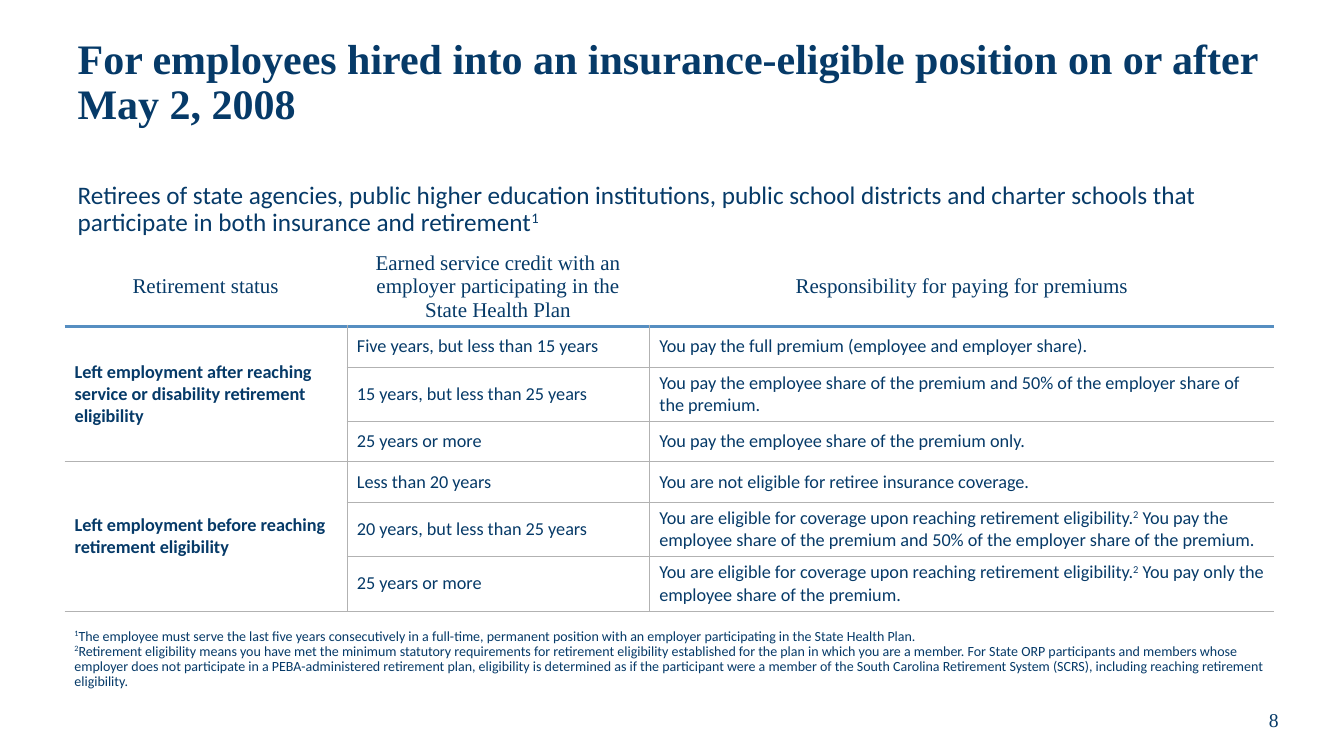
from lxml import etree
from pptx import Presentation
from pptx.dml.color import RGBColor
from pptx.enum.text import MSO_ANCHOR as ANCHOR, MSO_AUTO_SIZE as AUTO, PP_ALIGN as ALIGN
from pptx.oxml.ns import qn
from pptx.util import Pt

PX = 9144
COLORS = {"navy": "063A68", "blue": "568EC1", "gray": "B2B2B2"}
SERIF, SANS = "Times New Roman", "Calibri"

HEADERS = ["Retirement status",
           "Earned service credit with an\nemployer participating in the\nState Health Plan",
           "Responsibility for paying for premiums"]
ELIGIBLE = "You are eligible for coverage upon reaching retirement eligibility.^2^ "
STATUSES = [
    ("Left employment after reaching service or disability retirement eligibility", [
        ("Five years, but less than 15 years",
         "You pay the full premium (employee and employer share)."),
        ("15 years, but less than 25 years",
         "You pay the employee share of the premium and 50% of the employer share of the premium."),
        ("25 years or more", "You pay the employee share of the premium only.")]),
    ("Left employment before reaching retirement eligibility", [
        ("Less than 20 years", "You are not eligible for retiree insurance coverage."),
        ("20 years, but less than 25 years",
         ELIGIBLE + "You pay the employee share of the premium and 50% of the employer share of the premium."),
        ("25 years or more", ELIGIBLE + "You pay only the employee share of the premium.")]),
]
FOOTNOTES = [
    "^1^The employee must serve the last five years consecutively in a full-time, permanent position "
    "with an employer participating in the State Health Plan.",
    "^2^Retirement eligibility means you have met the minimum statutory requirements for retirement "
    "eligibility established for the plan in which you are a member. For State ORP participants and "
    "members whose employer does not participate in a PEBA-administered retirement plan, eligibility "
    "is determined as if the participant were a member of the South Carolina Retirement System (SCRS), "
    "including reaching retirement eligibility.",
]


def px(*values):
    return [v * PX for v in values]


def write(p, text, size, font=SANS, bold=False, align=ALIGN.LEFT, spacing=1.0):
    p.alignment = align
    p.line_spacing = spacing
    p.space_before = p.space_after = Pt(0)
    for n, line in enumerate(text.split("\n")):
        if n:
            p.add_line_break()
        for i, part in enumerate(line.split("^")):
            if not part:
                continue
            r = p.add_run()
            r.text = part
            r.font.size, r.font.name, r.font.bold = Pt(size), font, bold
            r.font.color.rgb = RGBColor.from_string(COLORS["navy"])
            if i % 2:
                r._r.get_or_add_rPr().set("baseline", "30000")


def place(sp, left, top, width, height, anchor=ANCHOR.TOP):
    sp.left, sp.top, sp.width, sp.height = px(left, top, width, height)
    tf = sp.text_frame
    tf.word_wrap, tf.auto_size, tf.vertical_anchor = True, AUTO.NONE, anchor
    return tf


def add_text_box(slide, box, paragraphs, anchor=ANCHOR.TOP, **fmt):
    tf = place(slide.shapes.add_textbox(*px(*box)), *box, anchor=anchor)
    for i, text in enumerate(paragraphs):
        write(tf.add_paragraph() if i else tf.paragraphs[0], text, **fmt)


def set_border(cell, side, line):
    tc_pr = cell._tc.get_or_add_tcPr()
    ln = etree.SubElement(tc_pr, qn(f"a:ln{side}"))
    if line is None:
        etree.SubElement(ln, qn("a:noFill"))
        return
    color, width = line
    ln.set("w", str(Pt(width)))
    fill = etree.SubElement(ln, qn("a:solidFill"))
    etree.SubElement(fill, qn("a:srgbClr")).set("val", COLORS[color])


def cell_borders(row, col, last_col):
    thin, thick = ("gray", 0.5), ("blue", 3)
    if row == 0:
        return {"L": None, "R": None, "T": None, "B": thick}
    return {"L": thin if col else None,
            "R": thin if col < last_col else None,
            "T": thick if row == 1 else thin,
            "B": thin}


def add_premium_table(slide, left, top, widths, heights):
    frame = slide.shapes.add_table(len(heights), len(widths),
                                   *px(left, top, sum(widths), sum(heights)))
    table = frame.table
    table.first_row = table.horz_banding = False
    for column, width in zip(table.columns, px(*widths)):
        column.width = width
    for row, height in zip(table.rows, px(*heights)):
        row.height = height
    for r in range(len(heights)):
        for c in range(len(widths)):
            cell = table.cell(r, c)
            for side, line in cell_borders(r, c, len(widths) - 1).items():
                set_border(cell, side, line)
            cell.fill.background()
            cell.vertical_anchor = ANCHOR.MIDDLE

    def fill_cell(row, col, text, **fmt):
        write(table.cell(row, col).text_frame.paragraphs[0], text, **fmt)

    for c, header in enumerate(HEADERS):
        fill_cell(0, c, header, size=15, font=SERIF, align=ALIGN.CENTER)
    row = 1
    for status, terms in STATUSES:
        table.cell(row, 0).merge(table.cell(row + len(terms) - 1, 0))
        fill_cell(row, 0, status, size=13, bold=True)
        for credit, premium in terms:
            fill_cell(row, 1, credit, size=13)
            fill_cell(row, 2, premium, size=13)
            row += 1


def main():
    prs = Presentation()
    prs.slide_width, prs.slide_height = px(1333, 750)
    slide = prs.slides.add_slide(prs.slide_layouts[1])

    title = place(slide.shapes.title, 67, 25, 1200, 115, ANCHOR.MIDDLE)
    write(title.paragraphs[0],
          "For employees hired into an insurance-eligible position on or after May 2, 2008",
          size=30, font=SERIF, bold=True, spacing=0.9)

    body = place(slide.placeholders[1], 67, 176, 1200, 513)
    p = body.paragraphs[0]
    p_pr = p._p.get_or_add_pPr()
    p_pr.set("marL", "0")
    p_pr.set("indent", "0")
    etree.SubElement(p_pr, qn("a:buNone"))
    write(p, "Retirees of state agencies, public higher education institutions, public school districts "
             "and charter schools that participate in both insurance and retirement^1^",
          size=18, spacing=0.9)

    add_premium_table(slide, 64, 245, [280, 300, 620], [50] + [40] * 6)
    add_text_box(slide, (64, 619, 1200, 71), FOOTNOTES, size=10, spacing=0.9)
    add_text_box(slide, (1205, 689, 117, 50), ["8"], anchor=ANCHOR.MIDDLE,
                 size=14, font=SERIF, align=ALIGN.CENTER)
    prs.save("out.pptx")


if __name__ == "__main__":
    main()
